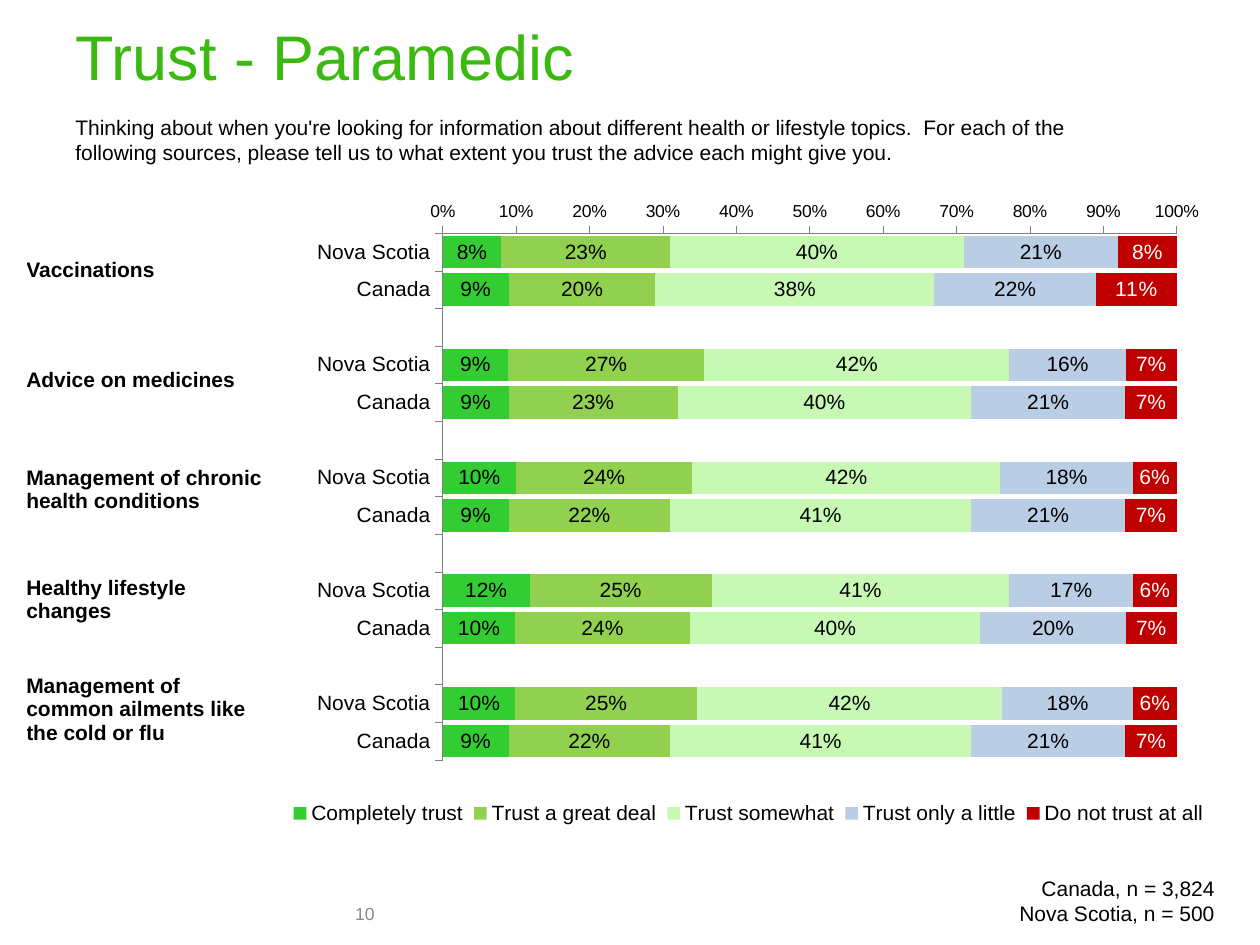
import lxml.etree
import pptx
import pptx.chart.data
import pptx.dml.color
import pptx.enum.chart
import pptx.enum.text
import pptx.oxml
import pptx.oxml.ns
import pptx.util
from pptx.util import Cm


def color(value):
    return pptx.dml.color.RGBColor.from_string(value)


def write(frame, lines, size=12, value="000000", bold=False, align="LEFT", anchor="TOP"):
    frame.word_wrap = True
    frame.vertical_anchor = getattr(pptx.enum.text.MSO_ANCHOR, anchor)
    frame.text = "\n".join(lines)
    for paragraph in frame.paragraphs:
        paragraph.alignment = getattr(pptx.enum.text.PP_ALIGN, align)
        settings = {"name": "Arial", "size": pptx.util.Pt(size), "bold": bold}
        for name, setting in settings.items():
            setattr(paragraph.font, name, setting)
        paragraph.font.color.rgb = color(value)


presentation = pptx.Presentation()
presentation.slide_width = Cm(25.4)
presentation.slide_height = Cm(19.05)
slide = presentation.slides.add_slide(presentation.slide_layouts[5])

title = slide.shapes.title
place = {"left": Cm(1.27), "top": Cm(0.03), "width": Cm(23.44), "height": Cm(2.16)}
for name, setting in place.items():
    setattr(title, name, setting)
write(title.text_frame, ["Trust - Paramedic"], size=36, value="3BB910", anchor="MIDDLE")

question = (
    "Thinking about when you're looking for information about different health or lifestyle topics.  "
    "For each of the following sources, please tell us to what extent you trust the advice each might give you."
)
text_boxes = [
    ((1.27, 2.18, 22.2, 1.28), [question], {}),
    ((11.3, 17.53, 13.44, 1.28), ["Canada, n = 3,824", "Nova Scotia, n = 500"], {"align": "RIGHT"}),
    ((6.91, 18.14, 5.92, 0.56), ["10"], {"size": 10, "value": "898989", "anchor": "MIDDLE"}),
]
for box, lines, settings in text_boxes:
    shape = slide.shapes.add_textbox(*map(Cm, box))
    write(shape.text_frame, lines, **settings)

topics = [
    "Vaccinations",
    "Advice on medicines",
    "Management of chronic health conditions",
    "Healthy lifestyle changes",
    "Management of common ailments like the cold or flu",
]
table = slide.shapes.add_table(len(topics), 1, Cm(0.53), Cm(4.34), Cm(4.98), Cm(11.07)).table
table.first_row = False
table.horz_banding = False
for row, topic in enumerate(topics):
    cell = table.cell(row, 0)
    cell.fill.background()
    for side in ("left", "top", "right", "bottom"):
        setattr(cell, f"margin_{side}", 0)
    write(cell.text_frame, [topic], bold=True)
    cell.vertical_anchor = pptx.enum.text.MSO_ANCHOR.MIDDLE

series_rows = [
    ("Completely trust", "33CC33", "000000", [8, 9, 9, 9, 10, 9, 12, 10, 10, 9]),
    ("Trust a great deal", "92D050", "000000", [23, 20, 27, 23, 24, 22, 25, 24, 25, 22]),
    ("Trust somewhat", "C7F9B5", "000000", [40, 38, 42, 40, 42, 41, 41, 40, 42, 41]),
    ("Trust only a little", "B9CDE5", "000000", [21, 22, 16, 21, 18, 21, 17, 20, 18, 21]),
    ("Do not trust at all", "C00000", "FFFFFF", [8, 11, 7, 7, 6, 7, 6, 7, 6, 7]),
]
chart_data = pptx.chart.data.CategoryChartData(number_format="0%")
chart_data.categories = (["Nova Scotia", "Canada", ""] * len(topics))[:-1]
for name, fill, label, percents in series_rows:
    values = []
    for start in range(0, len(percents), 2):
        values += [percents[start] / 100, percents[start + 1] / 100, None]
    chart_data.add_series(name, values[:-1])

chart = slide.shapes.add_chart(
    pptx.enum.chart.XL_CHART_TYPE.BAR_STACKED_100,
    Cm(5.51), Cm(4.06), Cm(18.97), Cm(12.78), chart_data,
).chart
chart.has_title = False
chart.font.name = "Arial"
chart.font.size = pptx.util.Pt(10)
chart.font.color.rgb = color("000000")

plot = chart.plots[0]
for name, setting in {"gap_width": 16, "overlap": 100, "vary_by_categories": False}.items():
    setattr(plot, name, setting)
for series, (name, fill, label, percents) in zip(plot.series, series_rows):
    series.format.fill.solid()
    series.format.fill.fore_color.rgb = color(fill)
    labels = series.data_labels
    settings = {
        "show_value": True,
        "number_format": "0%",
        "number_format_is_linked": False,
        "position": pptx.enum.chart.XL_LABEL_POSITION.CENTER,
    }
    for key, setting in settings.items():
        setattr(labels, key, setting)
    labels.font.size = pptx.util.Pt(12)
    labels.font.color.rgb = color(label)

for axis, size in ((chart.category_axis, 12), (chart.value_axis, 10)):
    axis.has_major_gridlines = False
    axis.major_tick_mark = pptx.enum.chart.XL_TICK_MARK.OUTSIDE
    axis.tick_labels.font.size = pptx.util.Pt(size)
    axis.format.line.color.rgb = color("808080")
    axis.format.line.width = pptx.util.Pt(0.25)
chart.category_axis.reverse_order = True
chart.category_axis.crosses = pptx.enum.chart.XL_AXIS_CROSSES.MAXIMUM
value_axis = chart.value_axis
for name, setting in {"minimum_scale": 0, "maximum_scale": 1, "major_unit": 0.1}.items():
    setattr(value_axis, name, setting)
value_axis.tick_labels.number_format = "0%"
value_axis.tick_labels.number_format_is_linked = False

chart.has_legend = True
legend = chart.legend
legend.position = pptx.enum.chart.XL_LEGEND_POSITION.RIGHT
legend.include_in_layout = True
legend.font.size = pptx.util.Pt(12)

plot_area = chart.element.find(".//" + pptx.oxml.ns.qn("c:plotArea"))
legend_element = chart.element.find(".//" + pptx.oxml.ns.qn("c:legend"))
layouts = [
    (plot_area, 0, "inner", (0.18, 0.04, 0.78, 0.84)),
    (legend_element, 1, None, (0.01, 0.93, 0.99, 0.07)),
]
for parent, index, target, box in layouts:
    for old in parent.findall(pptx.oxml.ns.qn("c:layout")):
        parent.remove(old)
    layout = pptx.oxml.parse_xml(f"<c:layout {pptx.oxml.ns.nsdecls('c')}><c:manualLayout/></c:layout>")
    entries = [("layoutTarget", target)] if target else []
    entries += [("xMode", "edge"), ("yMode", "edge"), *zip("xywh", box)]
    for name, setting in entries:
        lxml.etree.SubElement(layout[0], pptx.oxml.ns.qn(f"c:{name}")).set("val", str(setting))
    parent.insert(index, layout)

presentation.save("out.pptx")
